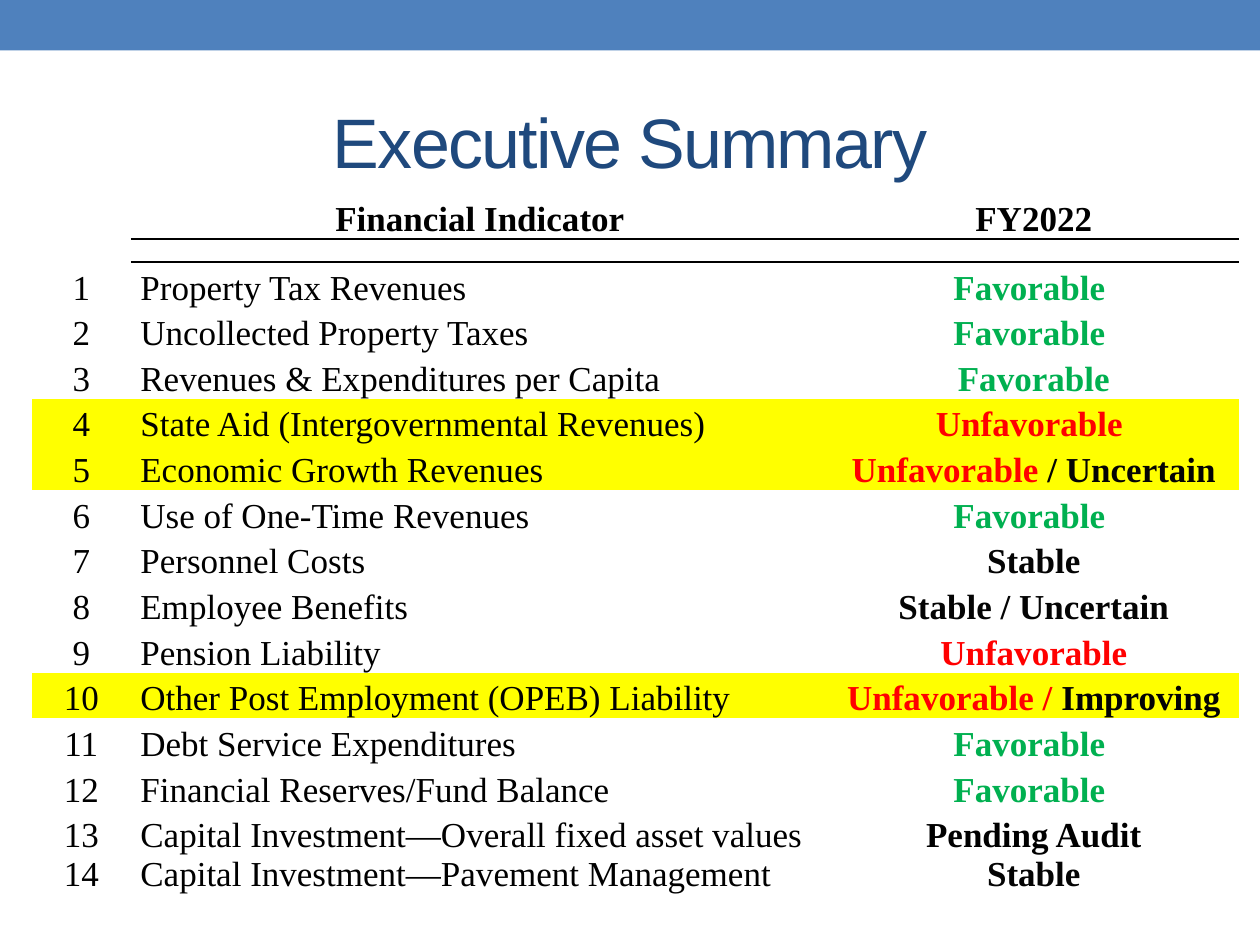
from lxml.etree import SubElement
from pptx import Presentation
from pptx.dml.color import RGBColor
from pptx.enum.shapes import MSO_SHAPE
from pptx.enum.text import MSO_ANCHOR, PP_ALIGN
from pptx.oxml.ns import qn
from pptx.util import Cm, Pt

COLORS = {
    "banner": "4F81BD", "title": "1F497D", "text": "000000", "neutral": "040404",
    "good": "00B050", "bad": "FF0000", "highlight": "FFFF00",
}
TITLE = "Executive Summary"
HEADINGS = ["Financial Indicator", "FY2022"]

# Each rating is a list of (text, color) runs.
FAVORABLE = [("Favorable ", "good")]
STABLE = [("Stable", "neutral")]
INDICATORS = [
    ("Property Tax Revenues", FAVORABLE),
    ("Uncollected Property Taxes", FAVORABLE),
    ("Revenues & Expenditures per Capita", [("Favorable", "good")]),
    ("State Aid (Intergovernmental Revenues)", [("Unfavorable ", "bad")]),
    ("Economic Growth Revenues", [("Unfavorable", "bad"), (" / Uncertain", "neutral")]),
    ("Use of One-Time Revenues", FAVORABLE),
    ("Personnel Costs", STABLE),
    ("Employee Benefits", [("Stable / Uncertain", "neutral")]),
    ("Pension Liability", [("Unfavorable", "bad")]),
    ("Other Post Employment (OPEB) Liability",
     [("Unfavorable / ", "bad"), ("Improving", "neutral")]),
    ("Debt Service Expenditures", FAVORABLE),
    ("Financial Reserves/Fund Balance", FAVORABLE),
    ("Capital Investment—Overall fixed asset values", [("Pending Audit", "text")]),
    ("Capital Investment—Pavement Management", STABLE),
]
HIGHLIGHTED = {4, 5, 10}

COLUMN_WIDTHS = [2, 14.07, 8.26]
HEADER_HEIGHT, SPACER_HEIGHT, ROW_HEIGHT, LAST_HEIGHT = 1.21, 0.46, 0.92, 1.7
NO_STYLE = "{2D5ABB26-0587-4C30-8999-92F81FD0307C}"


def rgb(name):
    return RGBColor.from_string(COLORS[name])


def add_runs(paragraph, runs, bold=False, align=PP_ALIGN.CENTER):
    paragraph.alignment = align
    for text, color in runs:
        run = paragraph.add_run()
        run.text = text
        run.font.name = "Times New Roman"
        run.font.size = Pt(20)
        run.font.bold = bold
        run.font.color.rgb = rgb(color)


def fill_row(cells, number, first):
    """Write one indicator; when not first, it goes on a new line of the row."""
    name, rating = INDICATORS[number - 1]
    contents = [
        ([(str(number), "text")], False, PP_ALIGN.CENTER),
        ([(name, "text")], False, PP_ALIGN.LEFT),
        (rating, True, PP_ALIGN.CENTER),
    ]
    for cell, (runs, bold, align) in zip(cells, contents):
        frame = cell.text_frame
        paragraph = frame.paragraphs[0] if first else frame.add_paragraph()
        add_runs(paragraph, runs, bold, align)
        if number in HIGHLIGHTED:
            cell.fill.solid()
            cell.fill.fore_color.rgb = rgb("highlight")


def add_border(cell, side):
    properties = cell._tc.get_or_add_tcPr()
    line = properties.makeelement(qn(f"a:{side}"), {"w": str(Pt(1))})
    fill = SubElement(line, qn("a:solidFill"))
    SubElement(fill, qn("a:srgbClr"), val=COLORS["text"])
    properties.insert(0, line)


def add_banner_and_title(slide, width):
    banner = slide.shapes.add_shape(MSO_SHAPE.RECTANGLE, 0, 0, width, Cm(1.02))
    banner.shadow.inherit = False
    banner.fill.solid()
    banner.fill.fore_color.rgb = rgb("banner")
    banner.line.fill.background()

    title = slide.shapes.add_textbox(Cm(1.27), Cm(1.47), Cm(22.86), Cm(2.74))
    frame = title.text_frame
    frame.word_wrap = True
    frame.vertical_anchor = MSO_ANCHOR.MIDDLE
    frame.text = TITLE
    paragraph = frame.paragraphs[0]
    paragraph.alignment = PP_ALIGN.CENTER
    run = paragraph.runs[0]
    run.font.name = "Arial"
    run.font.size = Pt(40)
    run.font.color.rgb = rgb("title")
    run.font._element.set("spc", "-100")


def add_indicator_table(slide):
    single_rows = len(INDICATORS) - 2  # the last two indicators share a row
    heights = [HEADER_HEIGHT, SPACER_HEIGHT, *[ROW_HEIGHT] * single_rows, LAST_HEIGHT]
    table = slide.shapes.add_table(
        len(heights), len(COLUMN_WIDTHS), Cm(0.64), Cm(3.61),
        Cm(sum(COLUMN_WIDTHS)), Cm(sum(heights))).table
    table.first_row = table.horz_banding = False
    table._tbl.tblPr.find(qn("a:tableStyleId")).text = NO_STYLE
    for column, width in zip(table.columns, COLUMN_WIDTHS):
        column.width = Cm(width)
    for row, height in zip(table.rows, heights):
        row.height = Cm(height)
    for cell in table.iter_cells():
        cell.margin_left = cell.margin_right = Cm(0.19)
        cell.margin_top = cell.margin_bottom = 0
        cell.vertical_anchor = MSO_ANCHOR.BOTTOM
        cell.fill.background()

    for column, heading in enumerate(HEADINGS, start=1):
        header = table.cell(0, column)
        add_runs(header.text_frame.paragraphs[0], [(heading, "text")], bold=True)
        add_border(header, "lnB")
        add_border(table.cell(1, column), "lnT")
    for cell in table.rows[1].cells:  # small type keeps the spacer row low
        SubElement(cell.text_frame.paragraphs[0]._p, qn("a:endParaRPr"), sz="800")

    last_row = len(heights) - 1
    for number in range(1, len(INDICATORS) + 1):
        row = min(number + 1, last_row)
        fill_row(table.rows[row].cells, number, first=row == number + 1)


def main():
    presentation = Presentation()
    presentation.slide_width, presentation.slide_height = Cm(25.4), Cm(19.05)
    slide = presentation.slides.add_slide(presentation.slide_layouts[6])
    add_banner_and_title(slide, presentation.slide_width)
    add_indicator_table(slide)
    presentation.save("out.pptx")


if __name__ == "__main__":
    main()
